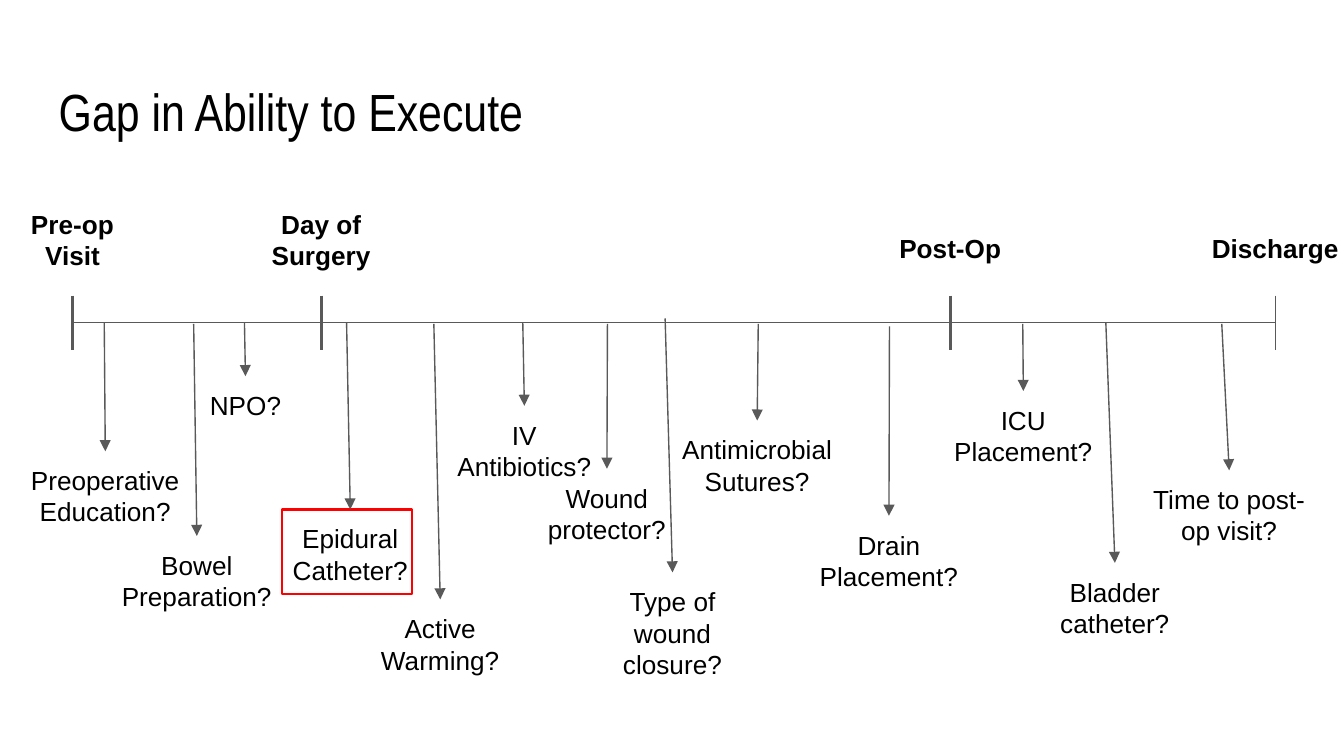
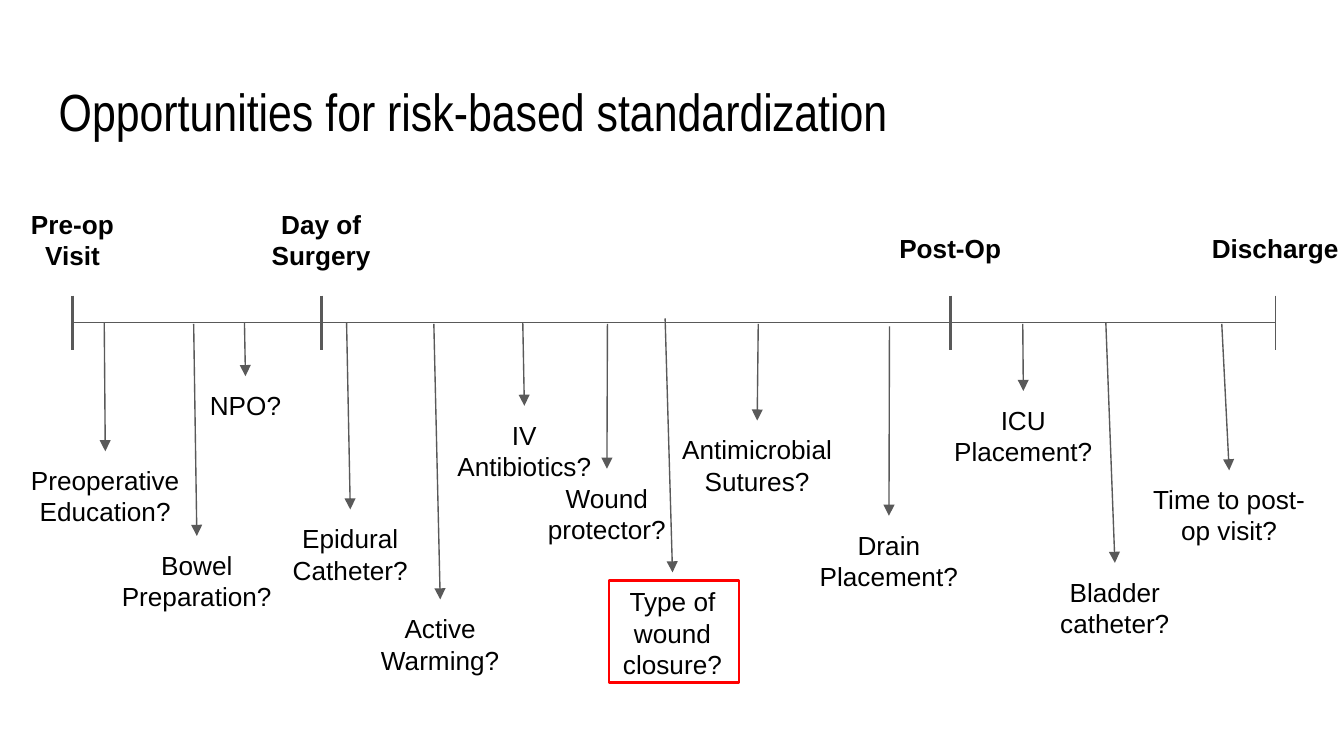
"""Build two slides that share a surgical care timeline and highlight one decision each."""
from dataclasses import dataclass

from lxml.etree import SubElement
from pptx import Presentation
from pptx.dml.color import RGBColor
from pptx.enum.shapes import MSO_CONNECTOR, MSO_SHAPE
from pptx.enum.text import MSO_ANCHOR, PP_ALIGN
from pptx.oxml.ns import qn
from pptx.util import Cm, Pt


@dataclass(frozen=True)
class Theme:
    text: RGBColor = RGBColor(0x00, 0x00, 0x00)
    line: RGBColor = RGBColor(0x59, 0x59, 0x59)
    highlight: RGBColor = RGBColor(0xFF, 0x00, 0x00)
    title_font: str = "Arial Narrow"
    body_font: str = "Arial"
    title_size: Pt = Pt(28)
    body_size: Pt = Pt(14)
    thin: Pt = Pt(0.75)
    thick: Pt = Pt(1.5)
    inset: Cm = Cm(0.25)


theme = Theme()

AXIS_Y = 6.1
TICK_HALF = 0.51
STAGE_BOTTOM = 5.29
LABEL_HEIGHTS = {1: 0.99, 2: 1.59, 3: 2.31}

# stage, tick x, label width, label height, tick weight
stages = [
    ("Pre-op Visit", 1.37, 2.26, 1.6, theme.thick),
    ("Day of Surgery", 6.07, 2.46, 1.6, theme.thick),
    ("Post-Op", 17.96, 2.46, 1.14, theme.thick),
    ("Discharge", 24.1, 3.02, 1.14, theme.thin),
]

# decision, label centre, label top, label width, lines, arrow start x, arrow start y
decisions = [
    ("Preoperative Education?", 1.99, 8.53, 3.48, 2, 1.97, 6.1),
    ("Bowel Preparation?", 3.72, 10.13, 3.48, 2, 3.66, 6.12),
    ("NPO?", 4.64, 7.11, 3.48, 1, 4.62, 6.1),
    ("Epidural Catheter?", 6.62, 9.63, 3.48, 2, 6.55, 6.1),
    ("Active Warming?", 8.32, 11.33, 3.48, 2, 8.2, 6.12),
    ("IV Antibiotics?", 9.91, 7.67, 3.15, 2, 9.88, 6.1),
    ("Wound protector?", 11.47, 8.86, 3.48, 2, 11.48, 6.12),
    ("Type of wound closure?", 12.71, 10.82, 3.48, 3, 12.57, 6.02),
    ("Antimicrobial Sutures?", 14.31, 7.95, 3.48, 2, 14.33, 6.12),
    ("Drain Placement?", 16.8, 9.75, 3.48, 2, 16.81, 6.17),
    ("ICU Placement?", 19.34, 7.39, 3.48, 2, 19.33, 6.12),
    ("Bladder catheter?", 21.07, 10.64, 3.48, 2, 20.9, 6.1),
    ("Time to post-op visit?", 23.23, 8.89, 3.48, 2, 23.09, 6.12),
]

# title, highlight left, top, width, height
pages = [
    ("Gap in Ability to Execute", 5.33, 9.63, 2.46, 1.6),
    ("Opportunities for risk-based standardization", 11.51, 10.97, 2.46, 1.93),
]


def write_text(shape, text, font_name, size, alignment, bold=False):
    """Fill a shape with one formatted run."""
    frame = shape.text_frame
    frame.word_wrap = True
    frame.vertical_anchor = MSO_ANCHOR.TOP
    frame.margin_left = frame.margin_right = theme.inset
    frame.margin_top = frame.margin_bottom = theme.inset
    paragraph = frame.paragraphs[0]
    paragraph.alignment = alignment
    run = paragraph.add_run()
    run.text = text
    run.font.name = font_name
    run.font.size = size
    run.font.bold = bold
    run.font.color.rgb = theme.text


def draw_line(slide, start_x, start_y, end_x, end_y, weight):
    """Add a straight grey connector without a shadow."""
    connector = slide.shapes.add_connector(
        MSO_CONNECTOR.STRAIGHT, Cm(start_x), Cm(start_y), Cm(end_x), Cm(end_y)
    )
    connector.line.color.rgb = theme.line
    connector.line.width = weight
    SubElement(connector._element.spPr, qn("a:effectLst"))
    return connector


presentation = Presentation()
presentation.slide_width = Cm(25.4)
presentation.slide_height = Cm(14.29)
title_only = presentation.slide_layouts[5]

for title_text, left, top, width, height in pages:
    slide = presentation.slides.add_slide(title_only)

    title = slide.shapes.title
    title.left, title.top, title.width, title.height = Cm(0.86), Cm(1.24), Cm(23.67), Cm(1.6)
    write_text(title, title_text, theme.title_font, theme.title_size, PP_ALIGN.LEFT)

    highlight = slide.shapes.add_shape(
        MSO_SHAPE.RECTANGLE, Cm(left), Cm(top), Cm(width), Cm(height)
    )
    highlight.shadow.inherit = False
    highlight.fill.background()
    highlight.line.color.rgb = theme.highlight
    highlight.line.width = theme.thick

    draw_line(slide, stages[0][1], AXIS_Y, stages[-1][1], AXIS_Y, theme.thin)

    for text, tick_x, width, height, weight in stages:
        draw_line(slide, tick_x, AXIS_Y - TICK_HALF, tick_x, AXIS_Y + TICK_HALF, weight)
        label = slide.shapes.add_textbox(
            Cm(tick_x - width / 2), Cm(STAGE_BOTTOM - height), Cm(width), Cm(height)
        )
        write_text(label, text, theme.body_font, theme.body_size, PP_ALIGN.CENTER, bold=True)

    for text, centre, top, width, lines, start_x, start_y in decisions:
        label = slide.shapes.add_textbox(
            Cm(centre - width / 2), Cm(top), Cm(width), Cm(LABEL_HEIGHTS[lines])
        )
        write_text(label, text, theme.body_font, theme.body_size, PP_ALIGN.CENTER)
        arrow = draw_line(slide, start_x, start_y, centre, top, theme.thin)
        arrow.end_connect(label, 0)
        SubElement(arrow.line._get_or_add_ln(), qn("a:tailEnd"), type="triangle")

presentation.save("out.pptx")
